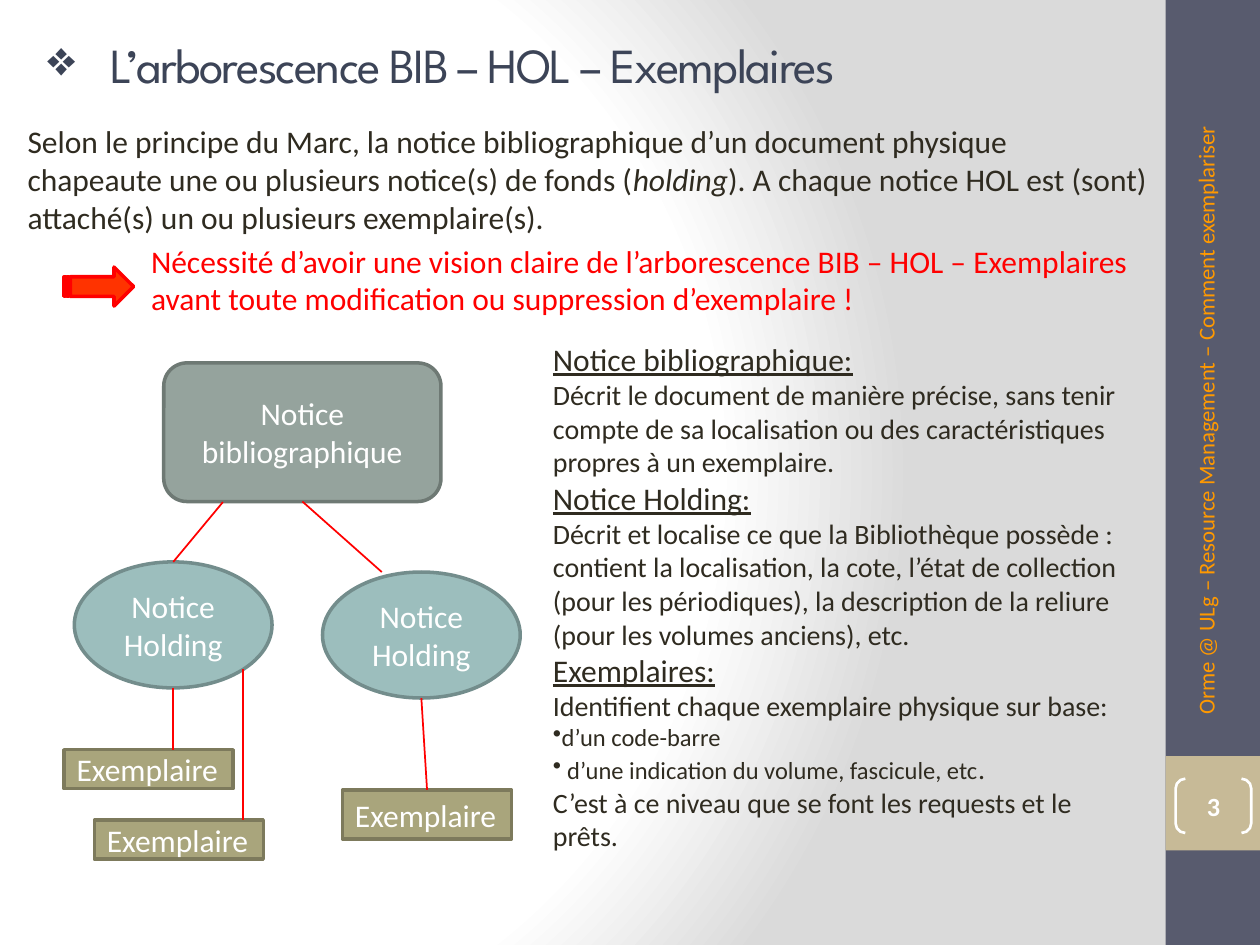
from dataclasses import dataclass

from lxml import etree
from pptx import Presentation
from pptx.dml.color import RGBColor
from pptx.enum.shapes import MSO_CONNECTOR, MSO_SHAPE
from pptx.enum.text import MSO_ANCHOR, PP_ALIGN
from pptx.oxml import parse_xml
from pptx.oxml.ns import nsdecls, qn
from pptx.util import Pt

RECT, ROUND, OVAL = MSO_SHAPE.RECTANGLE, MSO_SHAPE.ROUNDED_RECTANGLE, MSO_SHAPE.OVAL
BRACKETS, ARROW = MSO_SHAPE.DOUBLE_BRACKET, MSO_SHAPE.STRIPED_RIGHT_ARROW
STRAIGHT = MSO_CONNECTOR.STRAIGHT
TOP, MIDDLE = MSO_ANCHOR.TOP, MSO_ANCHOR.MIDDLE
LEFT, CENTER = PP_ALIGN.LEFT, PP_ALIGN.CENTER


@dataclass(frozen=True)
class Theme:
    head_font: str = "League Spartan"
    font: str = "Calibri"
    ink: str = "2F2B20"
    title: str = "3C4457"
    white: str = "FFFFFF"
    red: str = "FF0000"
    arrow: str = "FF3300"
    side: str = "585B6E"
    band: str = "C7BA97"
    side_text: str = "FF9900"
    record: tuple = ("95A39D", "6E7974")
    holding: tuple = ("9CBEBD", "738D8C")
    item: tuple = ("A9A57C", "7D7A5C")
    h1: float = 28
    h2: float = 18
    body: float = 16
    small: float = 14
    number: float = 15
    label: float = 13


T = Theme()


def add_run(p, text, size, color=T.ink, name=T.font, **fmt):
    r = p.add_run()
    r.text = text
    r.font.color.rgb = RGBColor.from_string(color)
    for key, value in dict(fmt, size=Pt(size), name=name).items():
        setattr(r.font, key, value)
    return r


def indent(p, margin, first=0, bullet=None):
    pPr = p._p.get_or_add_pPr()
    pPr.set("marL", str(Pt(margin)))
    pPr.set("indent", str(Pt(first)))
    if bullet:
        etree.SubElement(pPr, qn("a:buChar")).set("char", bullet)


def frame(sp, anchor=TOP):
    tf = sp.text_frame
    for key, value in dict(word_wrap=True, vertical_anchor=anchor).items():
        setattr(tf, key, value)
    return tf


def add_textbox(s, box, anchor=TOP):
    return frame(s.shapes.add_textbox(*map(Pt, box)), anchor)


def add_box(s, kind, box, fill=None, line=None, width=2):
    sp = s.shapes.add_shape(kind, *map(Pt, box))
    sp.shadow.inherit = False
    for target, color in ((sp.fill, fill), (sp.line.fill, line)):
        if color:
            target.solid()
            target.fore_color.rgb = RGBColor.from_string(color)
        else:
            target.background()
    if line:
        sp.line.width = Pt(width)
    return sp


def add_node(s, kind, box, colors, text, align=CENTER):
    sp = add_box(s, kind, box, *colors)
    p = frame(sp, MIDDLE).paragraphs[0]
    p.alignment = align
    add_run(p, text, T.h2, T.white)
    return sp


def add_link(s, start, end):
    c = s.shapes.add_connector(STRAIGHT, *map(Pt, start + end))
    c.line.color.rgb = RGBColor.from_string(T.red)
    c.line.width = Pt(1)
    etree.SubElement(c._element.spPr, qn("a:effectLst"))
    return c


def background(s):
    s.background.fill.gradient()
    old = s.element.find(".//" + qn("a:gradFill"))
    stops = "".join(
        f'<a:gs pos="{pos * 1000}"><a:srgbClr val="{color}"/></a:gs>'
        for pos, color in ((0, T.white), (38, T.white), (75, T.white), (100, "DADADA")))
    new = parse_xml(
        f'<a:gradFill {nsdecls("a")} rotWithShape="1"><a:gsLst>{stops}</a:gsLst>'
        '<a:path path="circle"><a:fillToRect l="20000" t="50000" r="100000" b="50000"/>'
        '</a:path></a:gradFill>')
    old.getparent().replace(old, new)


def sidebar(s, box):
    x, y, w, h = box
    add_box(s, RECT, box, T.side)
    add_box(s, RECT, (x, y + 432, w, w), T.band)
    sp = add_box(s, BRACKETS, (x + 5.8, y + 445, 43.2, 31), None, T.white, 1.5)
    sp.adjustments[0] = 0.179
    tf = frame(sp, MIDDLE)
    for side in ("left", "top", "right", "bottom"):
        setattr(tf, "margin_" + side, 0)
    p = tf.paragraphs[0]
    p.alignment = CENTER
    add_run(p, "3", T.number, T.white, bold=True)
    sp = s.shapes.add_textbox(*map(Pt, (x - 174.2, y + 200.9, 400.3, 28.8)))
    sp.rotation = 270
    add_run(frame(sp).paragraphs[0],
            "Orme @ ULg – Resource Management – Comment exemplariser", T.label, T.side_text)


def heading(s, box):
    p = add_textbox(s, box, MIDDLE).paragraphs[0]
    indent(p, 36, -36, "❖")
    r = add_run(p, "L’arborescence BIB – HOL – Exemplaires", T.h1, T.title, T.head_font)
    r._r.get_or_add_rPr().set("spc", "-100")


def introduction(s, box):
    x, y, w, h = box
    tf = add_textbox(s, box)
    p = tf.paragraphs[0]
    indent(p, 8.64)
    add_run(p, "Selon le principe du Marc, la notice bibliographique d’un document physique "
               "chapeaute une ou plusieurs notice(s) de fonds (", T.h2)
    add_run(p, "holding", T.h2, italic=True)
    add_run(p, "). A chaque notice HOL est (sont) attaché(s) un ou plusieurs exemplaire(s).", T.h2)
    p = tf.add_paragraph()
    p.space_before = Pt(3.6)
    indent(p, 79.2)
    add_run(p, "Nécessité d’avoir une vision claire de l’arborescence BIB – HOL – Exemplaires "
               "avant toute modification ou suppression d’exemplaire !", T.h2, T.red)
    add_box(s, ARROW, (x + 36.7, y + 86.4, 39.6, 22.3), T.arrow, T.red)


def tree(s, box):
    x, y, w, h = box
    record = add_node(s, ROUND, (x + 56.9, y, 158.4, 79.2), T.record, "Notice bibliographique")
    holdings = [add_node(s, OVAL, (x + dx, y + dy, 113, 72), T.holding, "Notice Holding")
                for dx, dy in ((5.8, 113.7), (147.6, 119.5))]
    items = [add_node(s, RECT, (x + dx, y + dy, 96.5, height), T.item, "Exemplaire", LEFT)
             for dx, dy, height in ((0, 221, 22.3), (17.3, 261.3, 22.3), (159.1, 244, 28.1))]
    links = [add_link(s, (x + x1, y + y1), (x + x2, y + y2)) for x1, y1, x2, y2 in (
        (90.7, 79.5, 62.3, 113.7), (136.1, 79.2, 181.5, 119.5), (62.3, 185.7, 62.3, 221),
        (102.3, 174.9, 102.3, 261.3), (204.1, 191.5, 207.4, 244))]
    links[0].end_connect(holdings[0], 0)
    links[1].begin_connect(record, 2)
    links[4].end_connect(items[2], 0)


def definitions(s, box):
    tf = add_textbox(s, box)
    sections = (
        ("Notice bibliographique:",
         "Décrit le document de manière précise, sans tenir compte de sa localisation ou des "
         "caractéristiques propres à un exemplaire."),
        ("Notice Holding:",
         "Décrit et localise ce que la Bibliothèque possède : contient la localisation, la cote, "
         "l’état de collection (pour les périodiques), la description de la reliure (pour les "
         "volumes anciens), etc."),
        ("Exemplaires:", "Identifient chaque exemplaire physique sur base:"))
    for i, (title, text) in enumerate(sections):
        p = tf.add_paragraph() if i else tf.paragraphs[0]
        add_run(p, title, T.h2, underline=True)
        add_run(tf.add_paragraph(), text, T.body)
    for text in ("d’un code-barre", " d’une indication du volume, fascicule, etc"):
        p = tf.add_paragraph()
        indent(p, 0, 0, "•")
        add_run(p, text, T.small)
    add_run(p, ".", T.body)
    add_run(tf.add_paragraph(), "C’est à ce niveau que se font les requests et le prêts.", T.body)


def main():
    prs = Presentation()
    prs.slide_width, prs.slide_height = Pt(720), Pt(540)
    s = prs.slides.add_slide(prs.slide_layouts[6])
    background(s)
    sidebar(s, (666, 0, 54, 540))
    heading(s, (20, 0, 629.3, 73.4))
    introduction(s, (0, 66.2, 663, 124.6))
    tree(s, (36.7, 207.4, 260.6, 283.6))
    definitions(s, (308.9, 190.8, 339.8, 307.4))
    prs.save("out.pptx")


if __name__ == "__main__":
    main()
